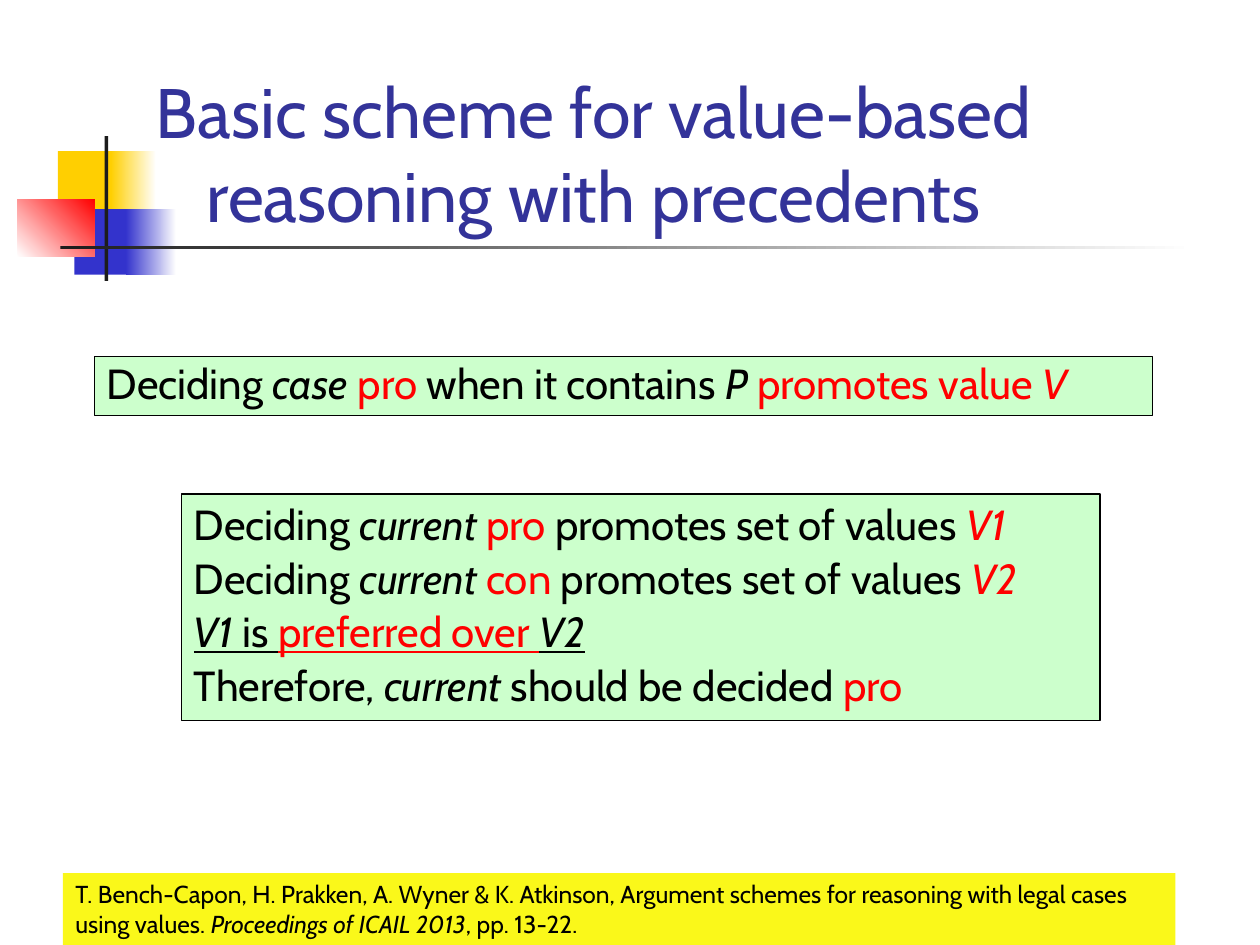
import pptx
import pptx.util
import pptx.dml.color
import pptx.enum.shapes
import pptx.enum.text

Inches = pptx.util.Inches
Pt = pptx.util.Pt
ANCHOR = pptx.enum.text.MSO_ANCHOR
ALIGN = pptx.enum.text.PP_ALIGN

FONT = "Cabin"
COLORS = {
    "yellow": "FFCF01", "blue": "3333CC", "red": "FF0000", "white": "FFFFFF",
    "bar": "1C1C1C", "title": "333399", "black": "000000",
    "scheme": "CCFFCC", "citation": "FAF81A",
}


def rgb(name):
    return pptx.dml.color.RGBColor.from_string(COLORS[name])


def add_block(slide, box, start, end=None, angle=0):
    block = slide.shapes.add_shape(
        pptx.enum.shapes.MSO_SHAPE.RECTANGLE, *(Inches(v) for v in box))
    block.shadow.inherit = False
    block.line.fill.background()
    if end is None:
        block.fill.solid()
        block.fill.fore_color.rgb = rgb(start)
    else:
        block.fill.gradient()
        block.fill.gradient_angle = angle
        for stop, name in zip(block.fill.gradient_stops, (start, end)):
            stop.color.rgb = rgb(name)
    return block


def add_run(paragraph, words, size, color="black", style=""):
    run = paragraph.add_run()
    run.text = words
    run.font.name = FONT
    run.font.size = Pt(size)
    run.font.color.rgb = rgb(color)
    run.font.italic = "i" in style
    run.font.underline = "u" in style


def add_panel(slide, box, color, lines, size, anchor, spacing=1.0, before=0, border=False):
    panel = add_block(slide, box, color)
    if border:
        panel.line.color.rgb = rgb("black")
        panel.line.width = Pt(0.75)
    frame = panel.text_frame
    frame.word_wrap = True
    frame.vertical_anchor = anchor
    for number, runs in enumerate(lines):
        paragraph = frame.add_paragraph() if number else frame.paragraphs[0]
        paragraph.alignment = ALIGN.LEFT
        paragraph.line_spacing = spacing
        paragraph.space_before = Pt(before if number else 0)
        for run in runs:
            add_run(paragraph, run[0], size, *run[1:])


def add_scheme(slide, box, lines):
    add_panel(slide, box, "scheme", lines, 24, ANCHOR.MIDDLE, 0.9, 4.8, True)


def add_citation(slide, box):
    reference = [
        ("T. Bench-Capon, H. Prakken, A. Wyner & K. Atkinson, Argument schemes "
         "for reasoning with legal cases using values. ",),
        ("Proceedings of ICAIL 2013", "black", "i"),
        (", pp. 13-22.",),
    ]
    add_panel(slide, box, "citation", [reference], 14, ANCHOR.TOP)


def add_ornament(slide, box):
    left, top, width, height = box
    add_block(slide, (left + 0.32, top + 0.12, 0.48, 0.52), "yellow")
    add_block(slide, (left + 0.74, top + 0.12, 0.36, 0.52), "yellow", "white")
    add_block(slide, (left + 0.45, top + 0.58, 0.46, 0.52), "blue")
    add_block(slide, (left + 0.86, top + 0.58, 0.4, 0.52), "blue", "white")
    add_block(slide, (left, top + 0.5, 0.61, 0.46), "white", "red", 45)
    add_block(slide, (left + 0.69, top, 0.03, height), "bar")
    add_block(slide, (left + 0.34, top + 0.87, width - 0.34, 0.03), "bar", "white")


def set_title(slide, box, words):
    title = slide.shapes.title
    title.left, title.top, title.width, title.height = (Inches(v) for v in box)
    frame = title.text_frame
    frame.word_wrap = True
    frame.auto_size = pptx.enum.text.MSO_AUTO_SIZE.NONE
    frame.vertical_anchor = ANCHOR.BOTTOM
    paragraph = frame.paragraphs[0]
    paragraph.alignment = ALIGN.CENTER
    add_run(paragraph, words, 40, "title")


def main():
    deck = pptx.Presentation()
    deck.slide_width, deck.slide_height = Inches(10), Inches(7.5)
    slide = deck.slides.add_slide(deck.slide_layouts[5])

    add_ornament(slide, (0.14, 1.08, 9.34, 1.15))
    set_title(slide, (0.75, 0.68, 7.92, 1.25),
              "Basic scheme for value-based reasoning with precedents")

    argument = [
        [("Deciding ",), ("current ", "black", "i"), (side, "red"),
         (" promotes set of values ",), (value, "red", "i")]
        for side, value in (("pro", "V1"), ("con", "V2"))
    ]
    argument += [
        [("V1", "black", "iu"), (" is ", "black", "u"),
         ("preferred over ", "red", "u"), ("V2", "black", "iu")],
        [("Therefore, ",), ("current", "black", "i"),
         (" should be decided ",), ("pro", "red")],
    ]
    add_scheme(slide, (1.44, 3.92, 7.29, 1.8), argument)

    premise = [("Deciding ",), ("case ", "black", "i"), ("pro", "red"),
               (" when it contains ",), ("P ", "black", "i"),
               ("promotes value ", "red"), ("V", "red", "i")]
    add_scheme(slide, (0.75, 2.83, 8.4, 0.47), [premise])
    add_citation(slide, (0.5, 6.93, 8.83, 0.57))

    deck.save("out.pptx")


if __name__ == "__main__":
    main()
